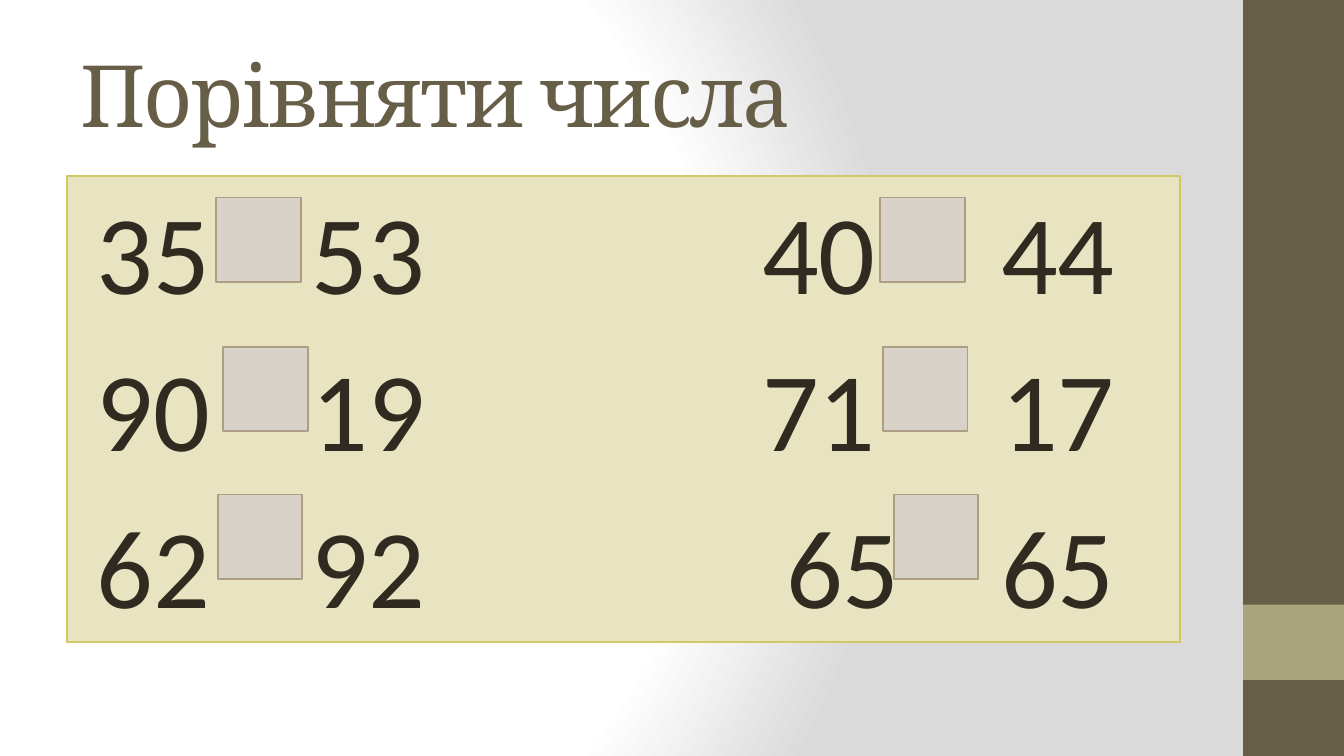
from lxml.etree import SubElement
from pptx import Presentation
from pptx.dml.color import RGBColor
from pptx.enum.shapes import MSO_SHAPE
from pptx.enum.text import MSO_ANCHOR, PP_ALIGN
from pptx.oxml import parse_xml
from pptx.oxml.ns import nsdecls, qn
from pptx.util import Inches, Pt

BROWN = RGBColor(0x67, 0x5E, 0x47)
OLIVE = RGBColor(0xA9, 0xA5, 0x7C)
CREAM = RGBColor(0xE8, 0xE4, 0xC1)
GOLD = RGBColor(0xD0, 0xC9, 0x67)
INK = RGBColor(0x2F, 0x2B, 0x20)
BEIGE = RGBColor(0xD9, 0xD2, 0xC9)
TAN = RGBColor(0xAE, 0x9D, 0x85)

SLIDE_WIDTH = Inches(10)
SLIDE_HEIGHT = SLIDE_WIDTH * 9 // 16

TITLE = "Порівняти числа"
# numbers in a row, tab stops from the text edge, left edges of the answer boxes
ROWS = [
    (("35", "53", "40", "44"), (1.6, 4.95, 6.73), (1.61, 6.55)),
    (("90", "19", "71", "17"), (1.6, 4.95, 6.73), (1.66, 6.57)),
    (("62", "92", "65", "65"), (1.6, 5.13, 6.73), (1.62, 6.65)),
]
BOX_TOPS = (1.47, 2.58, 3.68)
BOX_SIZE = 0.63

BACKGROUND = f"""<p:bg {nsdecls('p', 'a')}><p:bgPr><a:gradFill rotWithShape="1"><a:gsLst>
<a:gs pos="0"><a:srgbClr val="FFFFFF"/></a:gs>
<a:gs pos="75000"><a:srgbClr val="FFFFFF"/></a:gs>
<a:gs pos="100000"><a:srgbClr val="DADADA"/></a:gs>
</a:gsLst><a:path path="circle"><a:fillToRect l="20000" t="50000" r="100000" b="50000"/></a:path>
</a:gradFill><a:effectLst/></p:bgPr></p:bg>"""


def add_rectangle(slide, left, top, width, height, fill, line=None):
    rectangle = slide.shapes.add_shape(
        MSO_SHAPE.RECTANGLE, Inches(left), Inches(top), Inches(width), Inches(height))
    rectangle.shadow.inherit = False
    rectangle.fill.solid()
    rectangle.fill.fore_color.rgb = fill
    if line is None:
        rectangle.line.fill.background()
    else:
        rectangle.line.color.rgb = line
        rectangle.line.width = Pt(1)
    return rectangle


def add_run(paragraph, text, font, size, color):
    run = paragraph.add_run()
    run.text = text
    run.font.name = font
    run.font.size = Pt(size)
    run.font.color.rgb = color
    return run


def set_tab_stops(paragraph, stops):
    tabs = SubElement(paragraph._p.get_or_add_pPr(), qn("a:tabLst"))
    for stop in stops:
        SubElement(tabs, qn("a:tab"), pos=str(Inches(stop)), algn="l")


def add_title(slide):
    title = slide.shapes.add_textbox(Inches(0.5), Inches(0.22), Inches(8.33), Inches(0.94))
    frame = title.text_frame
    frame.word_wrap = True
    frame.vertical_anchor = MSO_ANCHOR.MIDDLE
    run = add_run(frame.paragraphs[0], TITLE, "Cambria", 46, BROWN)
    run.font._element.set("spc", "-100")


def add_exercise(slide):
    panel = add_rectangle(slide, 0.5, 1.31, 8.28, 3.47, CREAM, GOLD)
    frame = panel.text_frame
    frame.word_wrap = True
    frame.vertical_anchor = MSO_ANCHOR.TOP
    frame.margin_left = Inches(0.22)
    for index, (numbers, stops, box_lefts) in enumerate(ROWS):
        paragraph = frame.add_paragraph() if index else frame.paragraphs[0]
        paragraph.alignment = PP_ALIGN.LEFT
        paragraph.space_before = Pt(12 if index else 0)
        set_tab_stops(paragraph, stops)
        add_run(paragraph, "\t".join(numbers), "Calibri", 60, INK)
        for left in box_lefts:
            add_rectangle(slide, left, BOX_TOPS[index], BOX_SIZE, BOX_SIZE, BEIGE, TAN)


def main():
    deck = Presentation()
    deck.slide_width, deck.slide_height = SLIDE_WIDTH, SLIDE_HEIGHT
    slide = deck.slides.add_slide(deck.slide_layouts[6])
    slide._element.cSld.insert(0, parse_xml(BACKGROUND))
    add_rectangle(slide, 9.25, 0, 0.75, 5.63, BROWN)
    add_rectangle(slide, 9.25, 4.5, 0.75, 0.56, OLIVE)
    add_title(slide)
    add_exercise(slide)
    deck.save("out.pptx")


if __name__ == "__main__":
    main()
